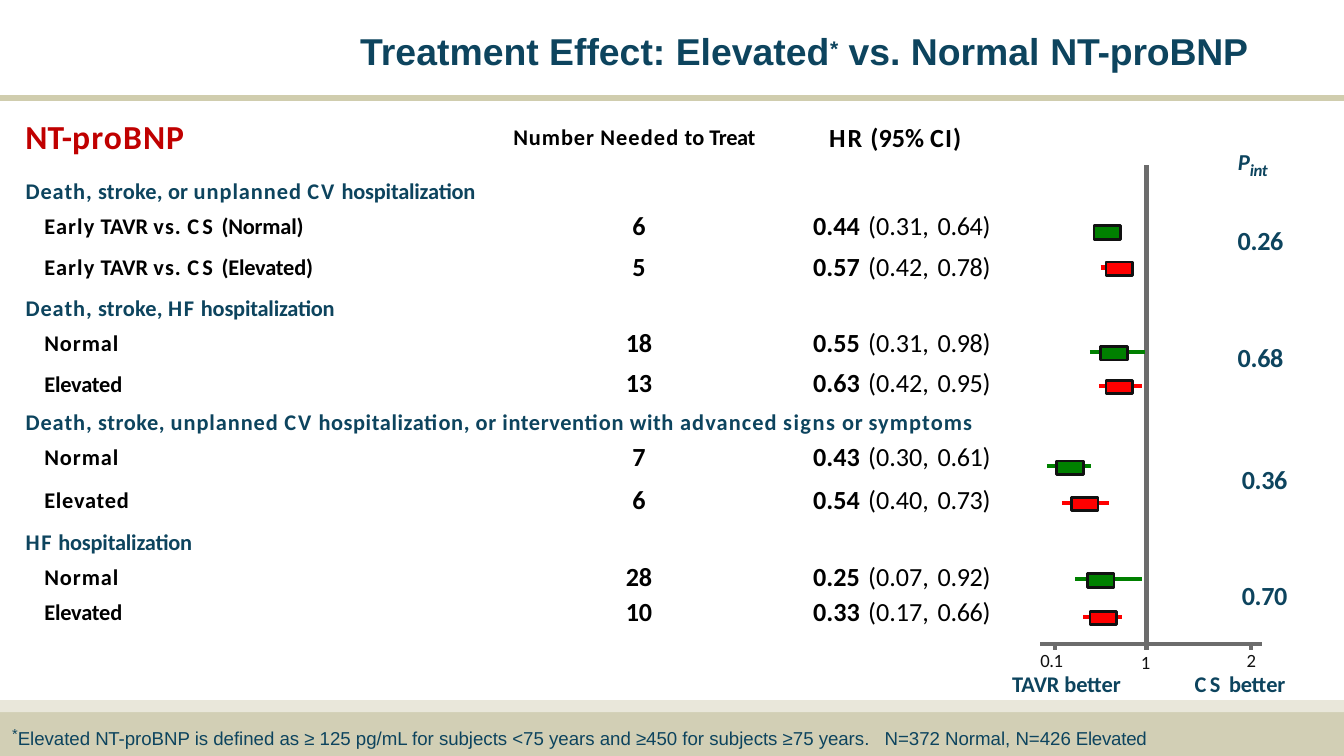
import pptx
import pptx.dml.color
import pptx.enum.shapes
import pptx.enum.text
import pptx.oxml.ns
import pptx.util
from lxml import etree
from pptx.util import Inches

NAVY, BLACK, INK, RED, GREEN, GRAY = "0D445E", "000000", "111111", "FF0000", "008000", "6C6C6C"
ALIGN = pptx.enum.text.PP_ALIGN

LABELS = [
    (2.46, 0.09, 7.32, 0.54, 0.12, 0.22, dict(size=20, font="Arial", bold=True),
     [("Treatment Effect: Elevated", 0), ("*", 0, dict(size=19.5, baseline=26)),
      (" vs. Normal ", 0), ("NT-proBNP", -0.1)]),
    (0.18, 0.85, 1.27, 0.33, 0.01, 0.01, dict(size=18, bold=True, color="C00000"),
     [("NT-", 0), ("proBNP", 0.6)]),
    (3.81, 0.9, 1.87, 0.23, 0.02, 0.01, dict(size=12, bold=True, color=BLACK),
     [("Number ", 0.5), ("Needed ", 0.6), ("to ", 0), ("Treat", -0.2)]),
    (6.16, 0.88, 1.06, 0.26, 0.02, 0.01, dict(size=14, bold=True, color=BLACK),
     [("HR ", 1.1), ("(95% ", 0), ("CI)", 0.6)]),
    (9.17, 1, 0.36, 0.26, 0.02, 0.04, dict(size=9, bold=True, italic=True),
     [("P", -0.3, dict(size=21, baseline=14)), ("int", -0.2)]),
    (0.05, 5.35, 8.55, 0.19, 0.01, 0.04, dict(size=10, font="Arial"),
     [("*", 0, dict(size=13.5, baseline=25)), ("Elevated ", 0), ("NT-", -0.1),
      ("proBNP is defined as ≥ 125 pg/mL for subjects <75 years and ≥450 for subjects ≥75 years.", 0),
      (" ", 5.6), ("N=372 Normal, N=426 ", 0), ("Elevated", -0.1)]),
]

EARLY = [("Early ", 0.6), ("TAVR ", 0), ("vs. ", 0.6), ("CS ", 1.8)]
NORMAL = [("Normal", 0.5)]
ELEVATED = [("Elevated", -0.1)]

OUTCOMES = [
    dict(title=[("Death, ", 0.5), ("stroke, or ", 0.1), ("unplanned ", 0.5), ("CV ", 1.1),
                ("hospitalization", -0.1)],
         p_value=("0.26", 9.2, 1.65),
         arms=[(EARLY + [("(Normal)", -0.1)], "6", "0.44", "0.31", "0.64", 8.13, 8.32, 1.72, 8.14),
               (EARLY + [("(Elevated)", -0.1)], "5", "0.57", "0.42", "0.78", 8.19, 8.4, 1.99, 8.23)]),
    dict(title=[("Death, ", 0.5), ("stroke, ", 0.1), ("HF ", 0.9), ("hospitalization", -0.1)],
         p_value=("0.68", 9.2, 2.52),
         arms=[(NORMAL, "18", "0.55", "0.31", "0.98", 8.11, 8.52, 2.62, 8.19),
               (ELEVATED, "13", "0.63", "0.42", "0.95", 8.18, 8.5, 2.87, 8.23)]),
    dict(title=[("Death, ", 0.5), ("stroke, ", 0.3), ("unplanned ", 0.5), ("CV ", 1.1),
                ("hospitalization, or intervention with ", 0.3), ("advanced ", 0.6),
                ("signs", 0.8), (" or ", 0.3), ("symptoms", 0.6)],
         p_value=("0.36", 9.23, 3.43),
         arms=[(NORMAL, "7", "0.43", "0.30", "0.61", 7.79, 8.12, 3.47, 7.86),
               ([("Elevated", 0.4)], "6", "0.54", "0.40", "0.73", 7.9, 8.25, 3.74, 7.97)]),
    dict(title=[("HF ", 0.9), ("hospitalization", -0.1)],
         p_value=("0.70", 9.23, 4.29),
         arms=[(NORMAL, "28", "0.25", "0.07", "0.92", 8, 8.5, 4.31, 8.09),
               (ELEVATED, "10", "0.33", "0.17", "0.66", 8.06, 8.35, 4.59, 8.11)]),
]
COLUMNS = [4.03, 1.25, 1.97]
ROWS = [0.22, 0.29, 0.28, 0.28, 0.31, 0.27, 0.27, 0.32, 0.28, 0.29, 0.29, 0.25]
TITLE_INSETS = [0, 0.07, 0.06, 0.08]
ARM_INSETS = [0.03, 0.04, 0.05, 0.04, 0.05, 0.05, 0.05, 0.02]
TICKS = [7.85, 8.53, 9.31]


def rgb(value):
    return pptx.dml.color.RGBColor.from_string(value)


def split_spacing(text, spacing):
    if spacing > 0 and text.strip() and text.endswith(" "):
        return [(text[:-1], spacing), (" ", 0)]
    return [(text, spacing)]


def write(frame, spans, align=ALIGN.LEFT, indent=0, leading=None, **base):
    para = frame.add_paragraph() if frame.text else frame.paragraphs[0]
    para.alignment = align
    if leading:
        para.line_spacing = pptx.util.Pt(leading)
    para._p.get_or_add_pPr().set("marL", str(Inches(indent)))
    for text, spacing, *changes in spans:
        style = {**dict(size=12, font="Calibri", color=NAVY, bold=False, italic=False, baseline=0),
                 **base, **(changes[0] if changes else {})}
        for piece, piece_spacing in split_spacing(text, spacing):
            span = para.add_run()
            span.text = piece
            span.font.size = pptx.util.Pt(style["size"])
            span.font.name = style["font"]
            span.font.bold = style["bold"]
            span.font.italic = style["italic"]
            span.font.color.rgb = rgb(style["color"])
            properties = span._r.get_or_add_rPr()
            properties.set("spc", str(round(piece_spacing * 100)))
            properties.set("baseline", str(style["baseline"] * 1000))


def add_box(left, top, width, height, inset=0.01):
    box = page.shapes.add_textbox(*map(Inches, (left, top, width, height)))
    frame = box.text_frame
    frame.word_wrap = True
    frame.margin_left = frame.margin_right = frame.margin_bottom = 0
    frame.margin_top = Inches(inset)
    return frame


def add_rectangle(left, top, width, height, fill, outline=None):
    shape = page.shapes.add_shape(pptx.enum.shapes.MSO_SHAPE.RECTANGLE,
                                  *map(Inches, (left, top, width, height)))
    shape.shadow.inherit = False
    shape.fill.solid()
    shape.fill.fore_color.rgb = rgb(fill)
    if outline:
        shape.line.color.rgb = rgb(outline)
        shape.line.width = pptx.util.Pt(1.5)
    else:
        shape.line.fill.background()


def add_line(x1, y1, x2, y2, color, width=2.25):
    line = page.shapes.add_connector(pptx.enum.shapes.MSO_CONNECTOR.STRAIGHT,
                                     *map(Inches, (x1, y1, x2, y2)))
    line.line.color.rgb = rgb(color)
    line.line.width = pptx.util.Pt(width)
    etree.SubElement(line._element.spPr, pptx.oxml.ns.qn("a:effectLst"))


def add_results():
    table = page.shapes.add_table(len(ROWS), len(COLUMNS), Inches(0.16), Inches(1.34),
                                  Inches(sum(COLUMNS)), Inches(sum(ROWS))).table
    table.first_row = table.horz_banding = False
    for column, width in zip(table.columns, COLUMNS):
        column.width = Inches(width)
    for row, height in zip(table.rows, ROWS):
        row.height = Inches(height)
    for cell in table.iter_cells():
        cell.fill.background()
        cell.margin_left = cell.margin_right = cell.margin_top = cell.margin_bottom = 0

    def fill_cell(row, column, spans, inset, right=0, **style):
        cell = table.cell(row, column)
        cell.margin_top = Inches(inset)
        cell.margin_right = Inches(right)
        write(cell.text_frame, spans, **style)

    for group, outcome in enumerate(OUTCOMES):
        top = group * 3
        fill_cell(top, 0, outcome["title"], TITLE_INSETS[group], indent=0.03, bold=True,
                  leading=14.4 if group else 13.7)
        for arm, (label, needed, ratio, low, high, *_) in enumerate(outcome["arms"]):
            row = top + 1 + arm
            inset = ARM_INSETS[group * 2 + arm]
            number_inset = inset - 0.02
            fill_cell(row, 0, label, inset, indent=0.17, bold=True, color=BLACK)
            fill_cell(row, 1, [(needed, -0.2)], number_inset, 0.12,
                      align=ALIGN.CENTER, size=14, bold=True, color=BLACK)
            fill_cell(row, 2, [(ratio, 0, dict(bold=True)), (" ", 1.2), (f"({low},", 0),
                               (" ", 1.4), (high + ")", -0.2)],
                      number_inset, 0.04, align=ALIGN.RIGHT, size=14, color=BLACK)
    for cell in table.iter_cells():
        if not cell.text:
            etree.SubElement(cell.text_frame.paragraphs[0]._p,
                             pptx.oxml.ns.qn("a:endParaRPr")).set("sz", "1000")
    table.cell(0, 1).merge(table.cell(0, 2))
    table.cell(6, 0).merge(table.cell(6, 2))


def add_forest_plot():
    add_line(8.53, 1.23, 8.53, 4.78, GRAY)
    add_line(7.74, 4.79, 9.39, 4.79, GRAY)
    for tick in TICKS:
        add_line(tick, 4.8, tick, 4.84, GRAY)
    scale = dict(size=10, color=INK)
    write(add_box(8.48, 4.83, 0.1, 0.19), [("1", -0.5)], indent=0.01, **scale)
    frame = add_box(7.52, 4.83, 0.91, 0.37)
    write(frame, [("0.1", -0.2)], indent=0.22, leading=11.2, **scale)
    write(frame, [("TAVR", 0), (" better", -0.1)], indent=0.01, leading=13.7, bold=True)
    frame = add_box(8.88, 4.83, 0.74, 0.38)
    write(frame, [("2", -0.5)], align=ALIGN.CENTER, indent=0.12, leading=11.3, **scale)
    write(frame, [("CS ", 1.8), ("better", -0.1)], indent=0.01, leading=13.7, bold=True)
    for outcome in OUTCOMES:
        text, left, top = outcome["p_value"]
        write(add_box(left, top, 0.4, 0.26, 0.02), [(text, -0.2)], indent=0.01, size=14, bold=True)
        for (*_, start, end, y, marker), color in zip(outcome["arms"], (GREEN, RED)):
            add_line(start, y, end, y, color)
            add_rectangle(marker, y - 0.04, 0.2, 0.1, color, INK)


deck = pptx.Presentation()
deck.slide_width = Inches(10)
deck.slide_height = deck.slide_width * 9 // 16
page = deck.slides.add_slide(deck.slide_layouts[6])
add_rectangle(0, 5.3, 10, 0.33, "D2CFB5")
add_rectangle(0, 5.21, 10, 0.09, "E9E7DA")
add_line(0, 0.73, 10, 0.73, "D0CDAE", 3)
for left, top, width, height, inset, indent, style, spans in LABELS:
    write(add_box(left, top, width, height, inset), spans, indent=indent, **style)
add_results()
add_forest_plot()
deck.save("out.pptx")
